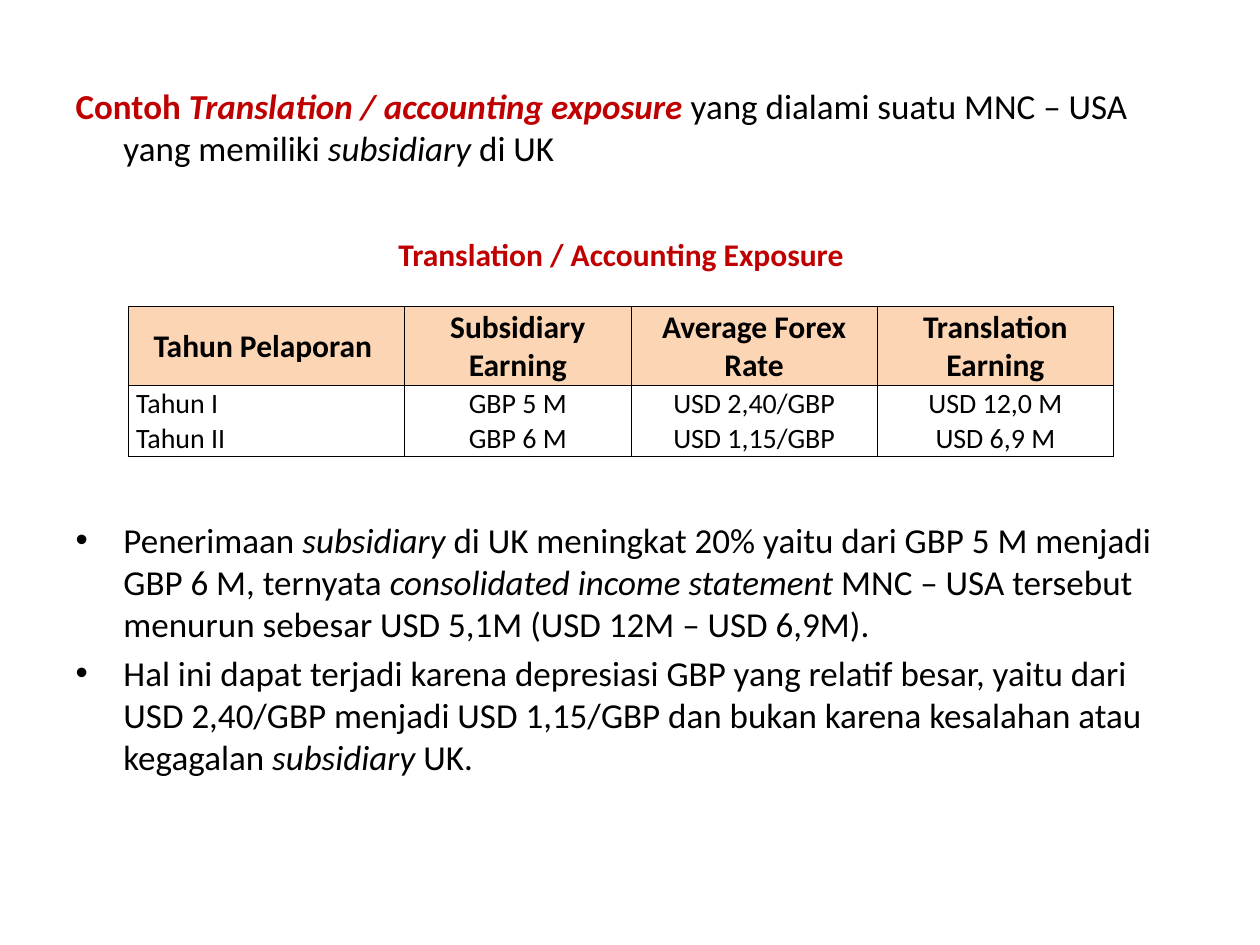
from dataclasses import dataclass

from lxml import etree
from pptx import Presentation
from pptx import util as u
from pptx.dml.color import RGBColor
from pptx.enum import text
from pptx.oxml import ns


@dataclass(frozen=True)
class Theme:
    font: str = "Calibri"
    accent: str = "C00000"
    ink: str = "000000"
    header: str = "FCD5B4"
    body_size: int = 20
    heading_size: int = 18
    figure_size: int = 16
    gap: int = 4
    border: float = 0.5


class SlideBuilder:
    def __init__(self, slide, theme):
        self.slide = slide
        self.theme = theme

    def add_run(self, paragraph, wording, size, color, bold=False, italic=False):
        run = paragraph.add_run()
        run.text = wording
        run.font.name = self.theme.font
        run.font.size = u.Pt(size)
        run.font.color.rgb = RGBColor.from_string(color)
        run.font.bold = bold
        run.font.italic = italic

    def add_body(self, box, paragraphs):
        body = self.slide.placeholders[1]
        body.left, body.top, body.width, body.height = map(u.Inches, box)
        frame = body.text_frame
        frame.word_wrap = True
        frame.auto_size = text.MSO_AUTO_SIZE.NONE
        for number, (bullet, space, runs) in enumerate(paragraphs):
            paragraph = frame.add_paragraph() if number else frame.paragraphs[0]
            paragraph.space_before = u.Pt(space)
            properties = paragraph._p.get_or_add_pPr()
            properties.set("marL", str(u.Inches(0.38)))
            properties.set("indent", str(u.Inches(-0.38)))
            if bullet:
                etree.SubElement(properties, ns.qn("a:buFont"), typeface="Arial")
                etree.SubElement(properties, ns.qn("a:buChar"), char=bullet)
            else:
                etree.SubElement(properties, ns.qn("a:buNone"))
            for wording, color, bold, italic in runs:
                self.add_run(paragraph, wording, self.theme.body_size, color, bold, italic)

    def add_borders(self, cell, sides):
        properties = cell._tc.get_or_add_tcPr()
        for side in "LRTB":
            line = etree.SubElement(properties, ns.qn(f"a:ln{side}"), w=str(u.Pt(self.theme.border)))
            if side in sides:
                fill = etree.SubElement(line, ns.qn("a:solidFill"))
                etree.SubElement(fill, ns.qn("a:srgbClr"), val=self.theme.ink)
            else:
                etree.SubElement(line, ns.qn("a:noFill"))

    def fill_cell(self, cell, wording, size, color, bold, align, anchor, fill, sides):
        cell.margin_left = cell.margin_right = cell.margin_top = u.Inches(0.01)
        cell.margin_bottom = 0
        cell.vertical_anchor = anchor
        self.add_borders(cell, sides)
        if fill:
            cell.fill.solid()
            cell.fill.fore_color.rgb = RGBColor.from_string(fill)
        else:
            cell.fill.background()
        paragraph = cell.text_frame.paragraphs[0]
        paragraph.alignment = align
        if wording:
            self.add_run(paragraph, wording, size, color, bold)
        else:
            etree.SubElement(paragraph._p, ns.qn("a:endParaRPr"), sz=str(size * 100))

    def add_exposure_table(self, left, top, widths, heights, heading, headers, years):
        theme = self.theme
        center, start = text.PP_ALIGN.CENTER, text.PP_ALIGN.LEFT
        middle, bottom = text.MSO_ANCHOR.MIDDLE, text.MSO_ANCHOR.BOTTOM
        size = (u.Inches(sum(widths)), u.Inches(sum(heights)))
        table = self.slide.shapes.add_table(
            len(heights), len(widths), u.Inches(left), u.Inches(top), *size).table
        table.first_row = table.horz_banding = False
        for column, width in zip(table.columns, widths):
            column.width = u.Inches(width)
        for row, height in zip(table.rows, heights):
            row.height = u.Inches(height)
        table.cell(0, 0).merge(table.cell(0, len(widths) - 1))
        self.fill_cell(table.cell(0, 0), heading, theme.heading_size, theme.accent,
                       True, center, bottom, None, "")
        for column, header in enumerate(headers):
            self.fill_cell(table.cell(1, column), "", 12, theme.ink,
                           False, center, bottom, None, "B")
            self.fill_cell(table.cell(2, column), header, theme.heading_size, theme.ink,
                           True, center, middle, theme.header, "LRTB")
        for row, (figures, sides) in enumerate(zip(years, ("LRT", "LRB")), start=3):
            for column, figure in enumerate(figures):
                self.fill_cell(table.cell(row, column), figure, theme.figure_size, theme.ink,
                               False, center if column else start, bottom, None, sides)


def main():
    theme = Theme()
    deck = Presentation()
    deck.slide_width, deck.slide_height = u.Inches(10), u.Inches(7.5)
    slide = deck.slides.add_slide(deck.slide_layouts[1])
    title = slide.shapes.title._element
    title.getparent().remove(title)
    builder = SlideBuilder(slide, theme)

    def plain(wording):
        return wording, theme.ink, False, False

    def italic(wording):
        return wording, theme.ink, False, True

    lead = [
        ("Contoh ", theme.accent, True, False),
        ("Translation / accounting exposure ", theme.accent, True, True),
        plain("yang dialami suatu MNC – USA yang memiliki "),
        italic("subsidiary"),
        plain(" di UK"),
    ]
    earnings = [
        plain("Penerimaan "),
        italic("subsidiary "),
        plain("di UK meningkat 20% yaitu dari GBP 5 M menjadi GBP 6 M, ternyata "),
        italic("consolidated income statement"),
        plain(" MNC – USA tersebut menurun sebesar USD 5,1M (USD 12M – USD 6,9M)."),
    ]
    cause = [
        plain("Hal ini dapat terjadi karena depresiasi GBP yang relatif besar, yaitu dari "
              "USD 2,40/GBP menjadi USD 1,15/GBP dan bukan karena kesalahan atau kegagalan "),
        italic("subsidiary"),
        plain(" UK."),
    ]
    builder.add_body((0.5, 0.62, 9, 6.07), [
        (None, theme.gap, lead),
        ("•", 200, earnings),
        ("•", theme.gap, cause),
    ])
    builder.add_exposure_table(
        1.02, 1.87, (2.19, 1.8, 1.95, 1.88), (0.31, 0.25, 0.62, 0.28, 0.28),
        "Translation / Accounting Exposure",
        ("Tahun Pelaporan ", "Subsidiary Earning", "Average Forex Rate", "Translation Earning"),
        ((" Tahun I", "GBP 5 M", "USD 2,40/GBP", "USD 12,0 M"),
         (" Tahun II", "GBP 6 M", "USD 1,15/GBP", "USD 6,9 M")))
    deck.save("out.pptx")


if __name__ == "__main__":
    main()
